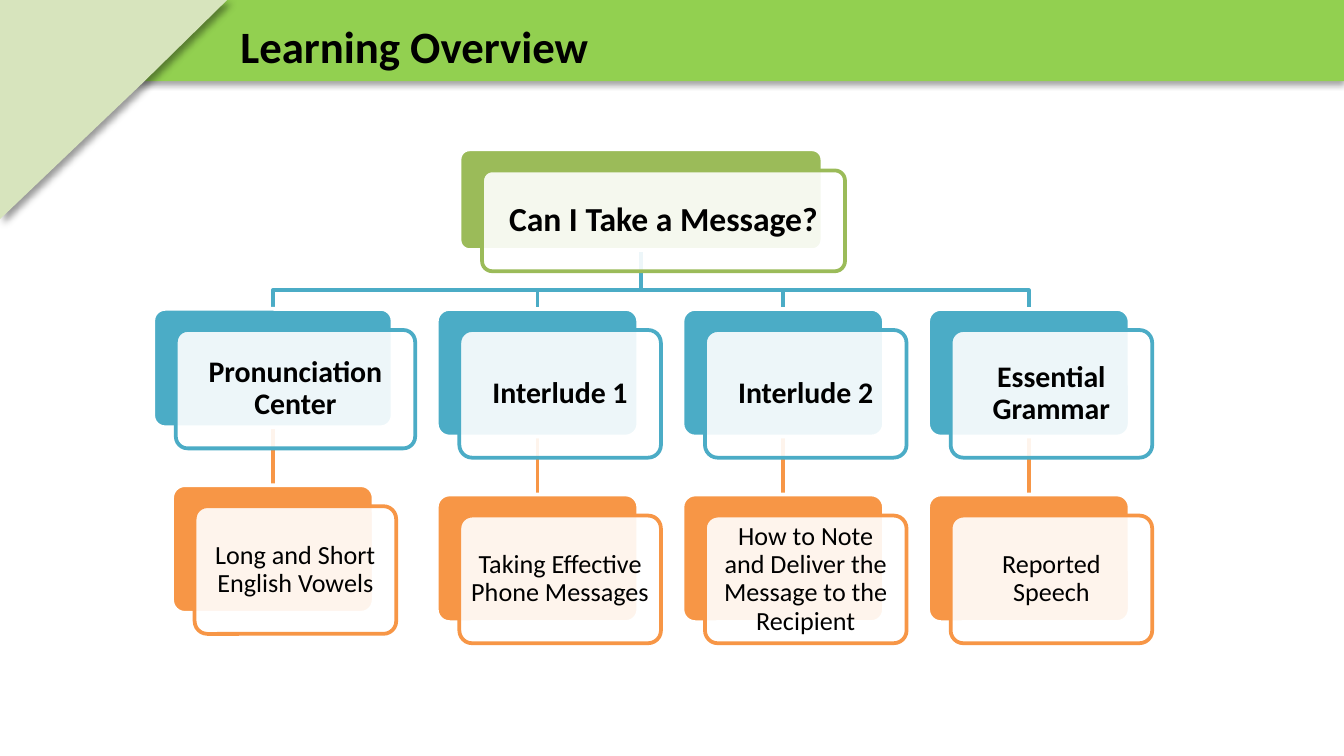
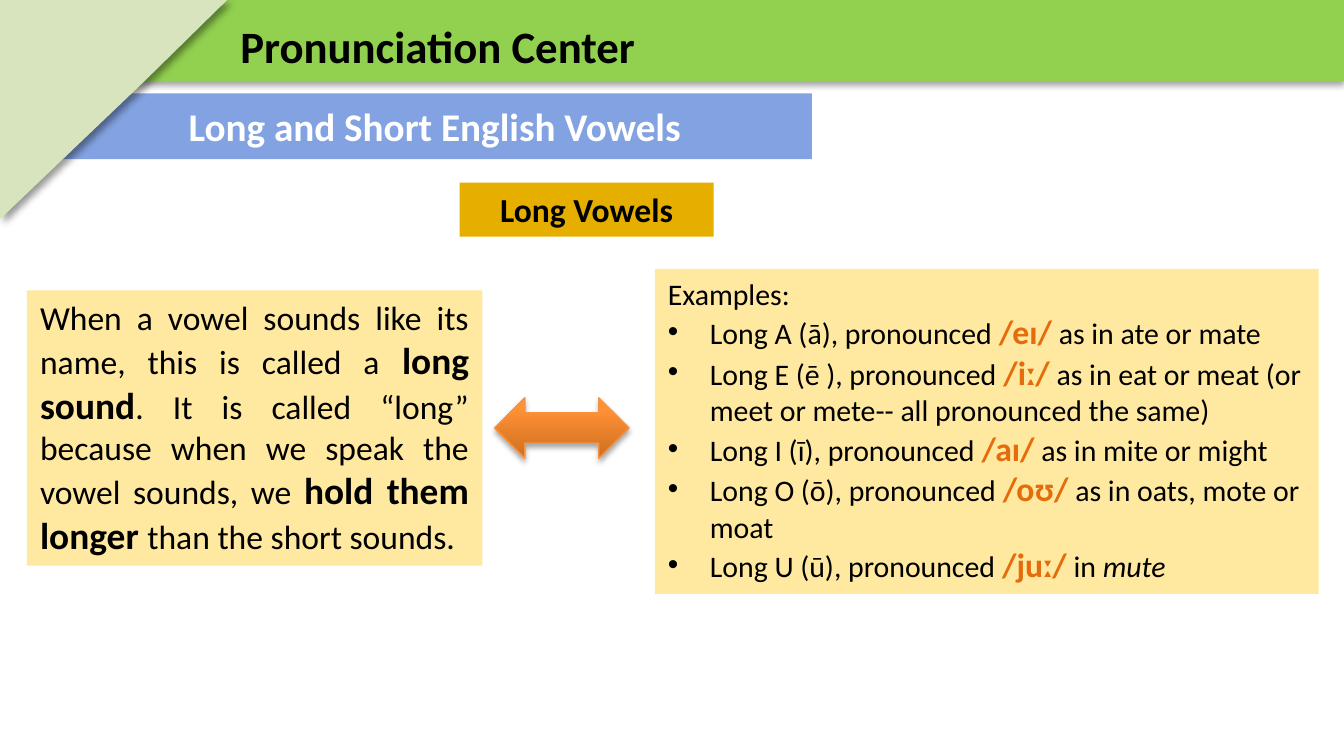
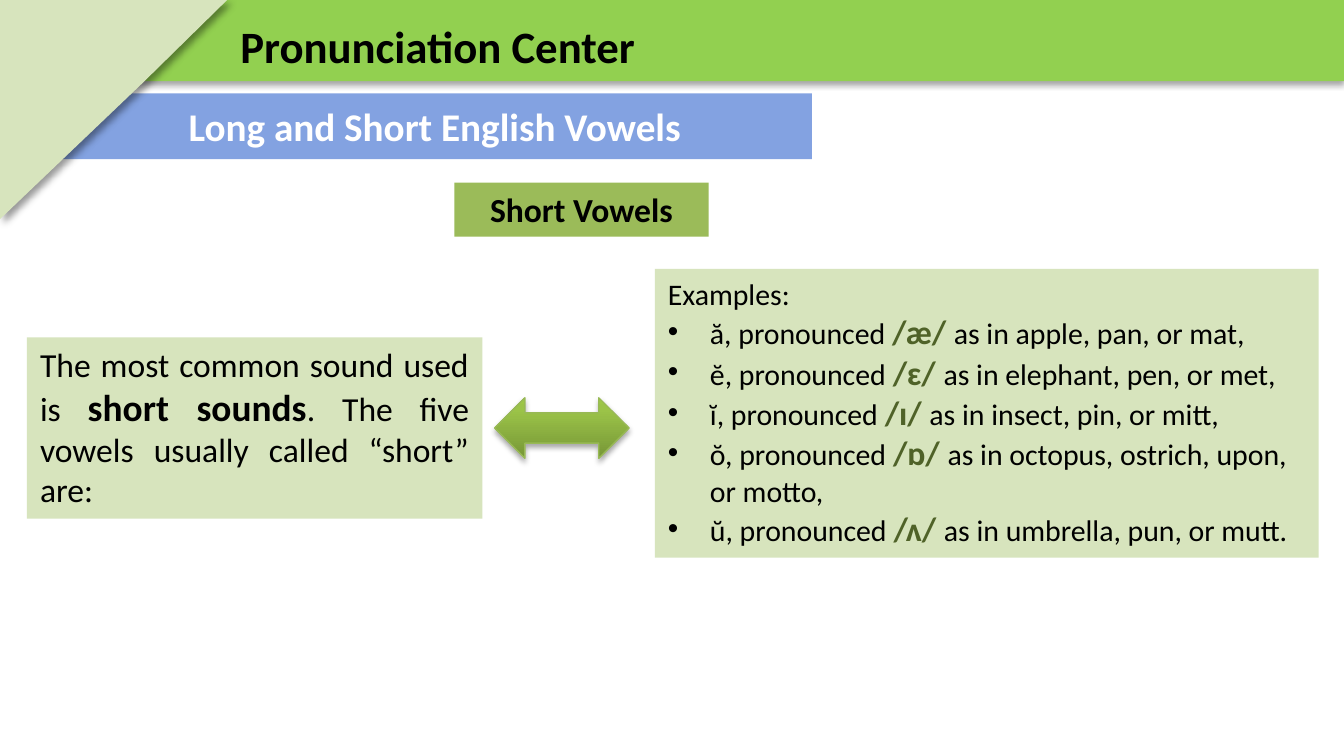
from copy import deepcopy
from dataclasses import dataclass
from typing import NamedTuple, Optional

from lxml import etree
from pptx import Presentation
from pptx.dml.color import RGBColor
from pptx.enum.shapes import MSO_CONNECTOR, MSO_SHAPE
from pptx.enum.text import MSO_ANCHOR, MSO_AUTO_SIZE, PP_ALIGN
from pptx.oxml.ns import qn
from pptx.shapes.autoshape import Shape
from pptx.slide import Slide
from pptx.text.text import TextFrame, _Paragraph
from pptx.util import Pt

RECTANGLE = MSO_SHAPE.RECTANGLE
ROUNDED = MSO_SHAPE.ROUNDED_RECTANGLE
DOUBLE_ARROW = MSO_SHAPE.LEFT_RIGHT_ARROW
STRAIGHT = MSO_CONNECTOR.STRAIGHT
TOP, MIDDLE = MSO_ANCHOR.TOP, MSO_ANCHOR.MIDDLE
LEFT, CENTER, JUSTIFY = PP_ALIGN.LEFT, PP_ALIGN.CENTER, PP_ALIGN.JUSTIFY
GROW = MSO_AUTO_SIZE.SHAPE_TO_FIT_TEXT

FONT = "Calibri"
BLACK, WHITE = "000000", "FFFFFF"
BAND_GREEN, PALE_GREEN, LEAF_GREEN = "92D050", "D7E4BD", "9BBB59"
TEAL, ORANGE, BLUE = "4BACC6", "F79646", "83A2E1"
GOLD, PALE_GOLD = "E6AF00", "FFE89F"

SLIDE_WIDTH, SLIDE_HEIGHT = 720, 405
CORNER = [(121.7, 0), (0, 0), (0, 117.4), (76.3, 44.6)]
TITLE_LEFT, TITLE_TOP, TITLE_HEIGHT = 121.7, 6.5, 36

CARD_SHIFT_X, CARD_SHIFT_Y = 12.1, 11.3
CARD_WIDTH, CARD_HEIGHT = 108, 68.4
TOPIC_TOP, TOPIC_GAP, BRANCH_TOP = 165.5, 31, 155.5
FIRST_CENTER, SECOND_CENTER, COLUMN_STEP = 146.2, 288, 131.6
PANEL_MIDDLE = 229.3
BULLET_INDENT = 22.5


class Box(NamedTuple):
    left: float
    top: float
    width: float
    height: float

    @property
    def center(self) -> float:
        return self.left + self.width / 2

    @property
    def bottom(self) -> float:
        return self.top + self.height


class Shadow(NamedTuple):
    opacity: int
    blur: float
    distance: float
    angle: int


class Card(NamedTuple):
    text: str
    box: Box
    color: str
    size: int
    bold: bool
    inset: float


class Topic(NamedTuple):
    title: str
    detail: str
    center: float
    width: float = CARD_WIDTH
    height: float = CARD_HEIGHT


class Example(NamedTuple):
    lead: str
    sound: str
    tail: str
    italic_tail: str = ""


@dataclass
class VowelPage:
    label: str
    label_left: float
    label_fill: str
    panel_fill: str
    sound_color: str
    arrow_stops: list[tuple[float, str]]
    arrow_line: str
    description: list[str]
    description_height: float
    examples: list[Example]
    examples_height: float


SOFT_SHADOW = Shadow(35, 3.1, 1.8, 90)
CORNER_SHADOW = Shadow(40, 4, 3, 45)

ROOT = Card("Can I Take a Message?", Box(246.2, 80, 194.4, 54), LEAF_GREEN, 18, True, 5)
TOPICS = [
    Topic("Pronunciation Center", "Long and Short English Vowels", FIRST_CENTER, 128.2, 63.4),
    *(
        Topic(title, detail, SECOND_CENTER + index * COLUMN_STEP)
        for index, (title, detail) in enumerate([
            ("Interlude 1", "Taking Effective Phone Messages"),
            ("Interlude 2", "How to Note and Deliver the Message to the Recipient"),
            ("Essential Grammar", "Reported Speech"),
        ])
    ),
]

VOWEL_PAGES = [
    VowelPage(
        label="Long Vowels",
        label_left=246.2,
        label_fill=GOLD,
        panel_fill=PALE_GOLD,
        sound_color="E46C0A",
        arrow_stops=[(0, "CC6E20"), (0.8, "FF9034"), (1, "FF9136")],
        arrow_line="F69240",
        description=[
            "When a vowel sounds like its name, this is called a ",
            "long sound",
            ". It is called “long” because when we speak the vowel sounds, we ",
            "hold them longer ",
            "than the short sounds.",
        ],
        description_height=147.6,
        examples=[
            Example("Long A (ā), pronounced ", "/eɪ/", " as in ate or mate"),
            Example("Long E (ē ), pronounced ", "/iː/",
                    " as in eat or meat (or meet or mete-- all pronounced the same)"),
            Example("Long I (ī), pronounced ", "/aɪ/", " as in mite or might"),
            Example("Long O (ō), pronounced ", "/oʊ/", " as in oats, mote or moat"),
            Example("Long U (ū), pronounced ", "/juː/", " in ", "mute"),
        ],
        examples_height=174.2,
    ),
    VowelPage(
        label="Short Vowels",
        label_left=243.4,
        label_fill=LEAF_GREEN,
        panel_fill=PALE_GREEN,
        sound_color="4F6228",
        arrow_stops=[(0, "779737"), (0.8, "9BC348"), (1, "9DC746")],
        arrow_line="98B955",
        description=[
            "The most common sound used is ",
            "short sounds",
            ". The five vowels usually called “short” are:",
        ],
        description_height=97.2,
        examples=[
            Example("ă, pronounced ", "/æ/ ", "as in apple, pan, or mat,"),
            Example("ĕ, pronounced ", "/ɛ/ ", "as in elephant, pen, or met,"),
            Example("ĭ, pronounced ", "/ɪ/ ", "as in insect, pin, or mitt,"),
            Example("ŏ, pronounced ", "/ɒ/ ", "as in octopus, ostrich, upon, or motto,"),
            Example("ŭ, pronounced ", "/ʌ/ ", "as in umbrella, pun, or mutt."),
        ],
        examples_height=154.8,
    ),
]


def rgb(color: str) -> RGBColor:
    return RGBColor.from_string(color)


def points(*values: float) -> list[Pt]:
    return [Pt(value) for value in values]


def add_alpha(color_element: etree._Element, percent: int) -> None:
    etree.SubElement(color_element, qn("a:alpha"), val=str(percent * 1000))


def style_shape(shape: Shape, fill: Optional[str] = None, line: Optional[str] = None,
                line_width: float = 2, opacity: int = 100,
                shadow: Optional[Shadow] = None) -> None:
    if fill:
        shape.fill.solid()
        shape.fill.fore_color.rgb = rgb(fill)
        if opacity < 100:
            add_alpha(shape._element.spPr.find(f"{qn('a:solidFill')}/{qn('a:srgbClr')}"), opacity)
    else:
        shape.fill.background()
    if line:
        shape.line.color.rgb = rgb(line)
        shape.line.width = Pt(line_width)
    else:
        shape.line.fill.background()
    shape.shadow.inherit = False
    if shadow:
        effects = shape._element.spPr.find(qn("a:effectLst"))
        outer = etree.SubElement(
            effects, qn("a:outerShdw"), blurRad=str(Pt(shadow.blur)),
            dist=str(Pt(shadow.distance)), dir=str(shadow.angle * 60000), rotWithShape="0")
        add_alpha(etree.SubElement(outer, qn("a:srgbClr"), val=BLACK), shadow.opacity)


def add_box(slide: Slide, kind: MSO_SHAPE, box: Box, fill: str, **style) -> Shape:
    shape = slide.shapes.add_shape(kind, *points(*box))
    style_shape(shape, fill, **style)
    return shape


def add_outline(slide: Slide, corners: list[tuple[float, float]], closed: bool, **style) -> None:
    start, *rest = [tuple(points(*corner)) for corner in corners]
    builder = slide.shapes.build_freeform(*start)
    builder.add_line_segments(rest, close=closed)
    style_shape(builder.convert_to_shape(), **style)


def add_run(paragraph: _Paragraph, text: str, *, size: float, color: str = BLACK,
            bold: bool = False, italic: bool = False) -> None:
    run = paragraph.add_run()
    run.text = text
    run.font.name = FONT
    run.font.size = Pt(size)
    run.font.color.rgb = rgb(color)
    run.font.bold = bold
    run.font.italic = italic


def prepare_frame(shape: Shape, *, anchor: MSO_ANCHOR = TOP, inset: Optional[float] = None,
                  grow: bool = False, wrap: bool = True) -> TextFrame:
    frame = shape.text_frame
    frame.word_wrap = wrap
    frame.vertical_anchor = anchor
    if grow:
        frame.auto_size = GROW
    if inset is not None:
        frame.margin_left = frame.margin_top = Pt(inset)
        frame.margin_right = frame.margin_bottom = Pt(inset)
    return frame


def write(shape: Shape, text: str, *, size: float, color: str = BLACK, bold: bool = True,
          align: PP_ALIGN = CENTER, spacing: float = 1, **frame_format) -> None:
    paragraph = prepare_frame(shape, **frame_format).paragraphs[0]
    paragraph.alignment = align
    paragraph.line_spacing = spacing
    add_run(paragraph, text, size=size, color=color, bold=bold)


def add_bullet(paragraph: _Paragraph) -> None:
    properties = paragraph._p.get_or_add_pPr()
    properties.set("marL", str(Pt(BULLET_INDENT)))
    properties.set("indent", str(-Pt(BULLET_INDENT)))
    etree.SubElement(properties, qn("a:buFont"), typeface="Arial")
    etree.SubElement(properties, qn("a:buChar"), char="•")


def add_page(presentation: Presentation, title: str, title_width: float,
             subtitle: str = "") -> Slide:
    slide = presentation.slides.add_slide(presentation.slide_layouts[6])
    add_box(slide, RECTANGLE, Box(0, 0, SLIDE_WIDTH, 43.5), BAND_GREEN, shadow=SOFT_SHADOW)
    if subtitle:
        banner = add_box(slide, RECTANGLE, Box(31, 50, 404, 35.3), BLUE)
        write(banner, subtitle, size=21, color=WHITE, anchor=MIDDLE, inset=3.6)
    heading = slide.shapes.add_textbox(*points(TITLE_LEFT, TITLE_TOP, title_width, TITLE_HEIGHT))
    write(heading, title, size=24, align=LEFT, grow=True, wrap=False)
    add_outline(slide, CORNER, True, fill=PALE_GREEN, shadow=CORNER_SHADOW)
    return slide


def add_card(slide: Slide, card: Card) -> Shape:
    back = add_box(slide, ROUNDED, card.box, card.color, line=WHITE)
    front_box = card.box._replace(left=card.box.left + CARD_SHIFT_X,
                                  top=card.box.top + CARD_SHIFT_Y)
    front = add_box(slide, ROUNDED, front_box, WHITE, line=card.color, opacity=90)
    for shape in (back, front):
        shape.adjustments[0] = 0.1
    write(front, card.text, size=card.size, bold=card.bold, spacing=0.9,
          anchor=MIDDLE, inset=card.inset)
    return back


def add_overview(presentation: Presentation) -> None:
    slide = add_page(presentation, "Learning Overview", 203)
    stems = []
    for topic in TOPICS:
        stem = slide.shapes.add_connector(STRAIGHT, 0, 0, 0, 0)
        stem.line.color.rgb = rgb(ORANGE)
        stem.line.width = Pt(2)
        etree.SubElement(stem._element.spPr, qn("a:effectLst"))
        stems.append(stem)
        branch = [(ROOT.box.center, ROOT.box.bottom), (ROOT.box.center, BRANCH_TOP),
                  (topic.center, BRANCH_TOP), (topic.center, TOPIC_TOP)]
        add_outline(slide, branch, False, line=TEAL)
    add_card(slide, ROOT)
    for topic, stem in zip(TOPICS, stems):
        topic_box = Box(topic.center - topic.width / 2, TOPIC_TOP, topic.width, topic.height)
        detail_box = Box(topic.center - CARD_WIDTH / 2, topic_box.bottom + TOPIC_GAP,
                         CARD_WIDTH, CARD_HEIGHT)
        topic_card = add_card(slide, Card(topic.title, topic_box, TEAL, 16, True, 5))
        detail_card = add_card(slide, Card(topic.detail, detail_box, ORANGE, 14, False, 4.2))
        stem.begin_connect(topic_card, 2)
        stem.end_connect(detail_card, 0)


def add_arrow(slide: Slide, page: VowelPage) -> None:
    arrow = add_box(slide, DOUBLE_ARROW, Box(265, PANEL_MIDDLE - 16.2, 72, 32.4), WHITE,
                    line=page.arrow_line, line_width=0.75, shadow=SOFT_SHADOW)
    arrow.fill.gradient()
    arrow.fill.gradient_angle = 90
    stop_list = arrow._element.spPr.find(f"{qn('a:gradFill')}/{qn('a:gsLst')}")
    stop_list.append(deepcopy(stop_list[-1]))
    for stop, (position, color) in zip(arrow.fill.gradient_stops, page.arrow_stops):
        stop.position = position
        stop.color.rgb = rgb(color)


def add_vowel_page(presentation: Presentation, page: VowelPage) -> None:
    slide = add_page(presentation, "Pronunciation Center", 228.2, "Long and Short English Vowels")
    label = add_box(slide, RECTANGLE, Box(page.label_left, 97.8, 136.2, 29), page.label_fill)
    write(label, page.label, size=18, grow=True)

    description_box = Box(14.4, PANEL_MIDDLE - page.description_height / 2, 244,
                          page.description_height)
    description = add_box(slide, RECTANGLE, description_box, page.panel_fill)
    paragraph = prepare_frame(description, grow=True).paragraphs[0]
    paragraph.alignment = JUSTIFY
    for index, text in enumerate(page.description):
        emphasized = index % 2 == 1
        add_run(paragraph, text, size=20 if emphasized else 18, bold=emphasized)

    add_arrow(slide, page)

    examples = add_box(slide, RECTANGLE, Box(350.8, 144, 355.7, page.examples_height),
                       page.panel_fill)
    frame = prepare_frame(examples, grow=True)
    frame.paragraphs[0].alignment = LEFT
    add_run(frame.paragraphs[0], "Examples:", size=16)
    for example in page.examples:
        paragraph = frame.add_paragraph()
        paragraph.alignment = LEFT
        add_bullet(paragraph)
        add_run(paragraph, example.lead, size=16)
        add_run(paragraph, example.sound, size=18, color=page.sound_color, bold=True)
        add_run(paragraph, example.tail, size=16)
        if example.italic_tail:
            add_run(paragraph, example.italic_tail, size=16, italic=True)


def main() -> None:
    presentation = Presentation()
    presentation.slide_width, presentation.slide_height = points(SLIDE_WIDTH, SLIDE_HEIGHT)
    add_overview(presentation)
    for page in VOWEL_PAGES:
        add_vowel_page(presentation, page)
    presentation.save("out.pptx")


if __name__ == "__main__":
    main()
